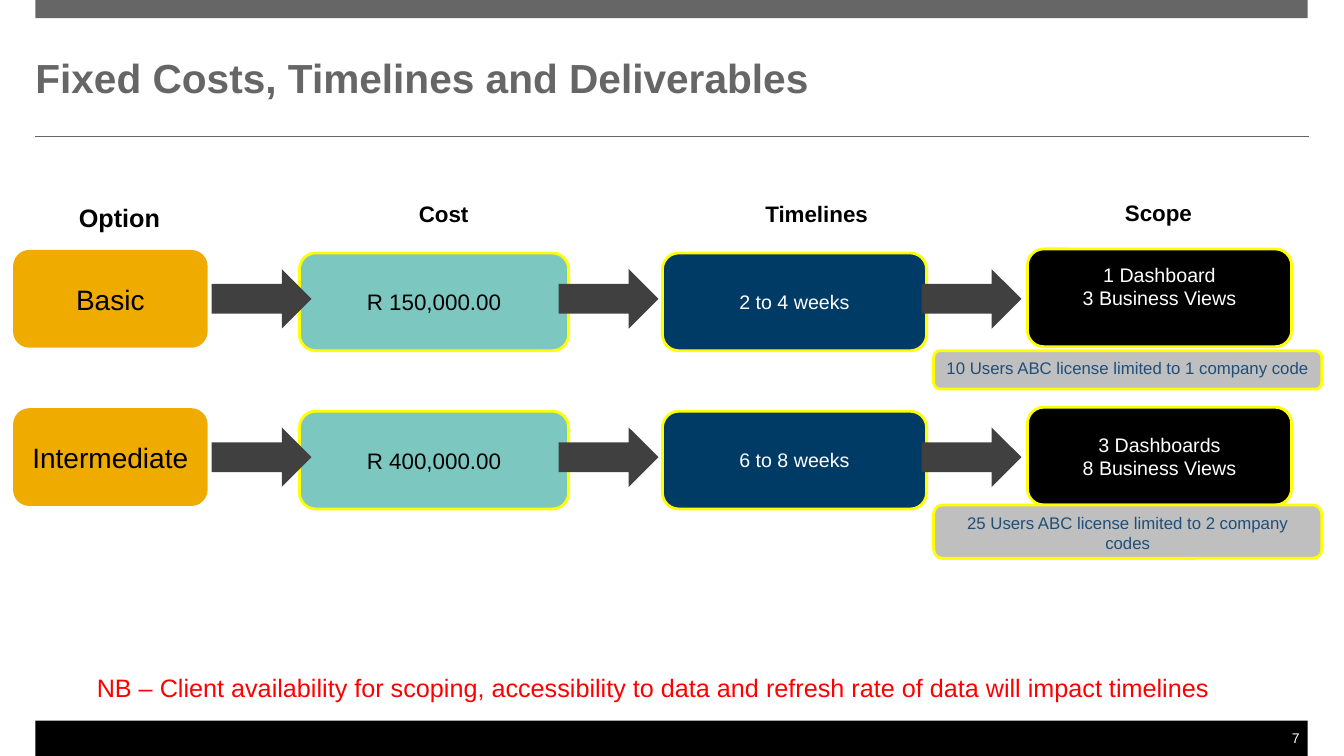
"""Builds the slide on fixed costs, timelines and deliverables."""
from lxml import etree
from pptx import Presentation
from pptx.dml.color import RGBColor
from pptx.enum.shapes import MSO_CONNECTOR, MSO_SHAPE
from pptx.enum.text import MSO_ANCHOR, PP_ALIGN
from pptx.oxml.ns import qn
from pptx.util import Pt

PX = 9144
RECT, ROUND, ARROW = MSO_SHAPE.RECTANGLE, MSO_SHAPE.ROUNDED_RECTANGLE, MSO_SHAPE.RIGHT_ARROW
TOP, MIDDLE = MSO_ANCHOR.TOP, MSO_ANCHOR.MIDDLE
LEFT, CENTER, RIGHT = PP_ALIGN.LEFT, PP_ALIGN.CENTER, PP_ALIGN.RIGHT
COLORS = {
    "grey": "666666", "black": "000000", "white": "FFFFFF", "amber": "F0AB00",
    "teal": "7CC8C1", "navy": "003B66", "yellow": "FFFF00", "arrow": "404040",
    "silver": "BFBFBF", "blue": "1F4E79", "red": "FF0000",
}


def write(box, lines, size, color, align=CENTER, anchor=MIDDLE, bold=False, insets=(10, 5, 10, 5)):
    frame = box.text_frame
    frame.word_wrap = True
    frame.vertical_anchor = anchor
    frame.margin_left, frame.margin_top, frame.margin_right, frame.margin_bottom = [
        inset * PX for inset in insets]
    for index, line in enumerate(lines):
        para = frame.add_paragraph() if index else frame.paragraphs[0]
        para.alignment = align
        span = para.add_run()
        span.text = line
        span.font.name = "Arial"
        span.font.size = Pt(size)
        span.font.bold = bold
        span.font.color.rgb = RGBColor.from_string(COLORS[color])


def add_block(kind, left, top, width, height, fill, outline=None):
    block = page.shapes.add_shape(kind, left * PX, top * PX, width * PX, height * PX)
    block.shadow.inherit = False
    block.fill.solid()
    block.fill.fore_color.rgb = RGBColor.from_string(COLORS[fill])
    if outline:
        block.line.color.rgb = RGBColor.from_string(COLORS[outline])
        block.line.width = Pt(2)
    else:
        block.line.fill.background()
    return block


deck = Presentation()
deck.slide_width, deck.slide_height = 1333 * PX, 750 * PX
page = deck.slides.add_slide(deck.slide_layouts[6])

add_block(RECT, 35, 0, 1262, 18, "grey")
add_block(RECT, 35, 715, 1262, 35, "black")
rule = page.shapes.add_connector(MSO_CONNECTOR.STRAIGHT, 35 * PX, 135 * PX, 1298 * PX, 135 * PX)
rule.line.color.rgb = RGBColor.from_string(COLORS["grey"])
rule.line.width = Pt(0.5)
etree.SubElement(rule._element.spPr, qn("a:effectLst"))

labels = [
    ("Fixed Costs, Timelines and Deliverables", 35, 35, 1262, 83, 29, "grey", LEFT, MIDDLE, True, 0),
    ("Option", 32, 201, 173, 30, 18, "black", CENTER, TOP, True, 0),
    ("Cost", 368, 199, 144, 27, 16, "black", CENTER, TOP, True, 0),
    ("Timelines", 738, 199, 144, 27, 16, "black", CENTER, TOP, True, 0),
    ("Scope", 1077, 198, 144, 27, 16, "black", CENTER, TOP, True, 0),
    ("NB – Client availability for scoping, accessibility to data and refresh rate of data "
     "will impact timelines", 96, 667, 1201, 30, 18, "red", LEFT, TOP, False, 0),
    ("7", 1271, 724, 27, 17, 10, "white", RIGHT, TOP, False, 9),
]
for text, left, top, width, height, size, color, align, anchor, bold, right_inset in labels:
    box = page.shapes.add_textbox(left * PX, top * PX, width * PX, height * PX)
    write(box, [text], size, color, align, anchor, bold, (0, 0, right_inset, 0))

columns = [
    (13, 248, 193, "amber", None, 20, "black"),
    (297, 251, 267, "teal", "yellow", 16, "black"),
    (657, 251, 262, "navy", "yellow", 14, "white"),
    (1019, 247, 262, "black", "yellow", 14, "white"),
]
options = [
    (["Basic"], ["R 150,000.00"], ["2 to 4 weeks"], ["1 Dashboard", "3 Business Views"]),
    (["Intermediate"], ["R 400,000.00"], ["6 to 8 weeks"], ["3 Dashboards", "8 Business Views"]),
]
scope_bottom_insets = [28, 5]
licenses = [
    ("10 Users ABC license limited to 1 company code", 348, 38),
    ("25 Users ABC license limited to 2 company codes", 501, 53),
]
ROW_STEP = 157
for row, option in enumerate(options):
    drop = row * ROW_STEP
    for lines, (left, top, width, fill, outline, size, color) in zip(option, columns):
        block = add_block(ROUND, left, top + drop, width, 97, fill, outline)
        bottom = scope_bottom_insets[row] if len(lines) > 1 else 5
        write(block, lines, size, color, insets=(10, 5, 10, bottom))
    for left in (210, 554, 914):
        add_block(ARROW, left, 267 + drop, 99, 59, "arrow")
    text, top, height = licenses[row]
    block = add_block(ROUND, 926, top, 385, height, "silver", "yellow")
    write(block, [text], 12, "blue", anchor=TOP)

deck.save("out.pptx")
